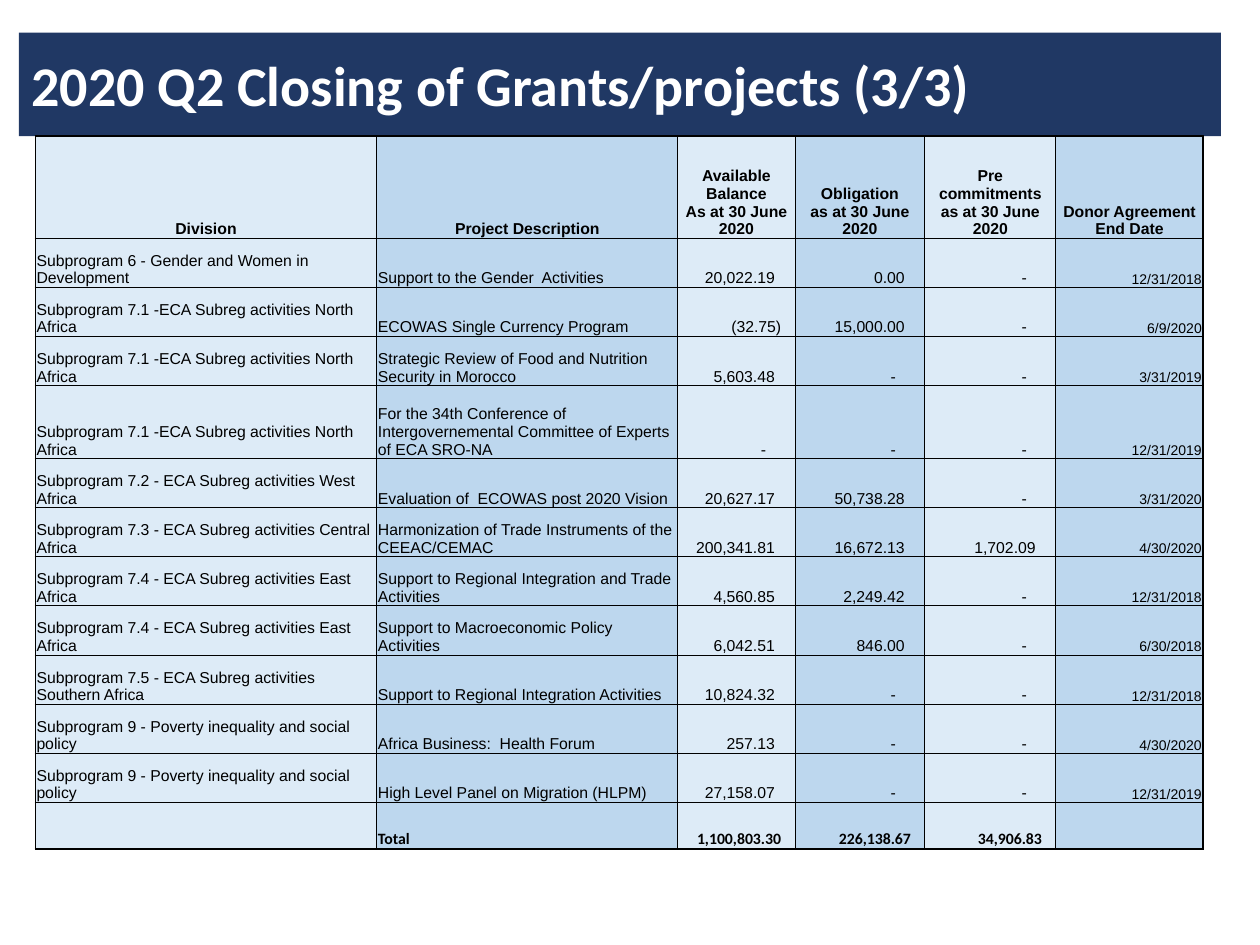
import dataclasses

import pptx
import pptx.dml.color
import pptx.enum.shapes
import pptx.enum.text
import pptx.oxml
import pptx.oxml.ns
import pptx.util

Inches = pptx.util.Inches
Pt = pptx.util.Pt
RGB = pptx.dml.color.RGBColor.from_string
ALIGN = pptx.enum.text.PP_ALIGN
ANCHOR = pptx.enum.text.MSO_ANCHOR


@dataclasses.dataclass(frozen=True)
class Theme:
    banner: str = "203864"
    white: str = "FFFFFF"
    ink: str = "000000"
    bands: tuple = ("DDEBF7", "BDD7EE")
    heading_font: str = "Calibri"
    body_font: str = "Arial"
    title_size: int = 32
    body_size: int = 9
    date_size: int = 8
    inner_line: float = 0.5
    outer_line: float = 1


THEME = Theme()
TITLE = "2020 Q2 Closing of Grants/projects (3/3)"
COL_WIDTHS = [2.71, 2.39, 0.93, 1.03, 1.04, 1.17]
ROW_HEIGHT, HEADER_HEIGHT, TALL_HEIGHT, TOTAL_HEIGHT = 0.39, 0.81, 0.58, 0.37
TALL_ROW = 4
AMOUNT_COLS = range(2, 5)
DATE_COL = 5
NORTH = "Subprogram 7.1 -ECA Subreg activities North Africa"
EAST = "Subprogram 7.4 - ECA Subreg activities East Africa"
POVERTY = "Subprogram 9 - Poverty inequality and social policy"
ROWS = [
    ("Division", "Project Description", "Available Balance\vAs at 30 June 2020",
     "Obligation\vas at 30 June 2020", "Pre commitments\vas at 30 June 2020",
     "Donor Agreement End Date"),
    ("Subprogram 6 - Gender and Women in Development", "Support to the Gender  Activities",
     "20,022.19", "0.00", "-", "12/31/2018"),
    (NORTH, "ECOWAS Single Currency Program", "(32.75)", "15,000.00", "-", "6/9/2020"),
    (NORTH, "Strategic Review of Food and Nutrition Security in Morocco",
     "5,603.48", "-", "-", "3/31/2019"),
    (NORTH, "For the 34th Conference of Intergovernemental Committee of Experts of ECA SRO-NA",
     "-", "-", "-", "12/31/2019"),
    ("Subprogram 7.2 - ECA Subreg activities West Africa",
     "Evaluation of  ECOWAS post 2020 Vision", "20,627.17", "50,738.28", "-", "3/31/2020"),
    ("Subprogram 7.3 - ECA Subreg activities Central Africa",
     "Harmonization of Trade Instruments of the CEEAC/CEMAC",
     "200,341.81", "16,672.13", "1,702.09", "4/30/2020"),
    (EAST, "Support to Regional Integration and Trade Activities",
     "4,560.85", "2,249.42", "-", "12/31/2018"),
    (EAST, "Support to Macroeconomic Policy Activities", "6,042.51", "846.00", "-", "6/30/2018"),
    ("Subprogram 7.5 - ECA Subreg activities Southern Africa",
     "Support to Regional Integration Activities", "10,824.32", "-", "-", "12/31/2018"),
    (POVERTY, "Africa Business:  Health Forum", "257.13", "-", "-", "4/30/2020"),
    (POVERTY, "High Level Panel on Migration (HLPM)", "27,158.07", "-", "-", "12/31/2019"),
    ("", "Total", "1,100,803.30", "226,138.67", "34,906.83", ""),
]
LAST_ROW = len(ROWS) - 1
LAST_COL = len(COL_WIDTHS) - 1


def apply(obj, values):
    for name, value in values.items():
        setattr(obj, name, value)


def set_font(font, color, **values):
    apply(font, values)
    font.color.rgb = RGB(color)


def add_title(s):
    sp = s.shapes.title
    apply(sp, dict(left=Inches(0.15), top=Inches(0.26), width=Inches(9.54), height=Inches(0.82)))
    ns = pptx.oxml.ns.nsdecls("a")
    sp._element.spPr.append(pptx.oxml.parse_xml(
        f'<a:prstGeom {ns} prst="roundRect"><a:avLst/></a:prstGeom>'))
    sp.fill.solid()
    sp.fill.fore_color.rgb = RGB(THEME.banner)
    tf = sp.text_frame
    inset = Inches(0.1)
    apply(tf, dict(word_wrap=True, auto_size=pptx.enum.text.MSO_AUTO_SIZE.NONE,
                   vertical_anchor=ANCHOR.MIDDLE, margin_left=inset, margin_top=inset,
                   margin_right=inset, margin_bottom=inset))
    p = tf.paragraphs[0]
    p.alignment = ALIGN.LEFT
    r = p.add_run()
    r.text = TITLE
    set_font(r.font, THEME.white, name=THEME.heading_font, size=Pt(THEME.title_size), bold=True)


def set_borders(cell, row, col):
    outer = {"L": col == 0, "R": col == LAST_COL, "T": row == 0, "B": row == LAST_ROW}
    tc_pr = cell._tc.get_or_add_tcPr()
    for side, is_outer in outer.items():
        width = Pt(THEME.outer_line if is_outer else THEME.inner_line)
        tc_pr.append(pptx.oxml.parse_xml(
            f'<a:ln{side} {pptx.oxml.ns.nsdecls("a")} w="{width}"><a:solidFill>'
            f'<a:srgbClr val="{THEME.ink}"/></a:solidFill></a:ln{side}>'))


def right_margin(text, row, col):
    if row == 0 or col not in AMOUNT_COLS:
        return 0.01
    if text == "-":
        return 0.23
    return 0.11 if row == LAST_ROW or text.endswith(")") else 0.16


def alignment(row, col):
    if row == 0:
        return ALIGN.CENTER
    return ALIGN.RIGHT if col >= AMOUNT_COLS.start else ALIGN.LEFT


def fill_cell(cell, text, row, col):
    set_borders(cell, row, col)
    cell.fill.solid()
    cell.fill.fore_color.rgb = RGB(THEME.bands[col % 2])
    apply(cell, dict(vertical_anchor=ANCHOR.BOTTOM, margin_left=Inches(0.01),
                     margin_top=Inches(0.01), margin_bottom=0,
                     margin_right=Inches(right_margin(text, row, col))))
    if not text:
        return
    p = cell.text_frame.paragraphs[0]
    p.text = text
    p.alignment = alignment(row, col)
    is_date = col == DATE_COL and row > 0
    for r in p.runs:
        set_font(r.font, THEME.ink,
                 name=THEME.heading_font if row == LAST_ROW else THEME.body_font,
                 size=Pt(THEME.date_size if is_date else THEME.body_size),
                 bold=row in (0, LAST_ROW))


def add_grants_table(s):
    heights = [ROW_HEIGHT] * len(ROWS)
    heights[0], heights[TALL_ROW], heights[-1] = HEADER_HEIGHT, TALL_HEIGHT, TOTAL_HEIGHT
    table = s.shapes.add_table(len(ROWS), len(COL_WIDTHS), Inches(0.28), Inches(1.08),
                               Inches(sum(COL_WIDTHS)), Inches(sum(heights))).table
    apply(table, dict(first_row=False, horz_banding=False))
    for column, width in zip(table.columns, COL_WIDTHS):
        column.width = Inches(width)
    for row, texts in enumerate(ROWS):
        table.rows[row].height = Inches(heights[row])
        for col, text in enumerate(texts):
            fill_cell(table.cell(row, col), text, row, col)


def main():
    prs = pptx.Presentation()
    apply(prs, dict(slide_width=Inches(10), slide_height=Inches(7.5)))
    s = prs.slides.add_slide(prs.slide_layouts[5])
    add_title(s)
    add_grants_table(s)
    prs.save("out.pptx")


if __name__ == "__main__":
    main()
